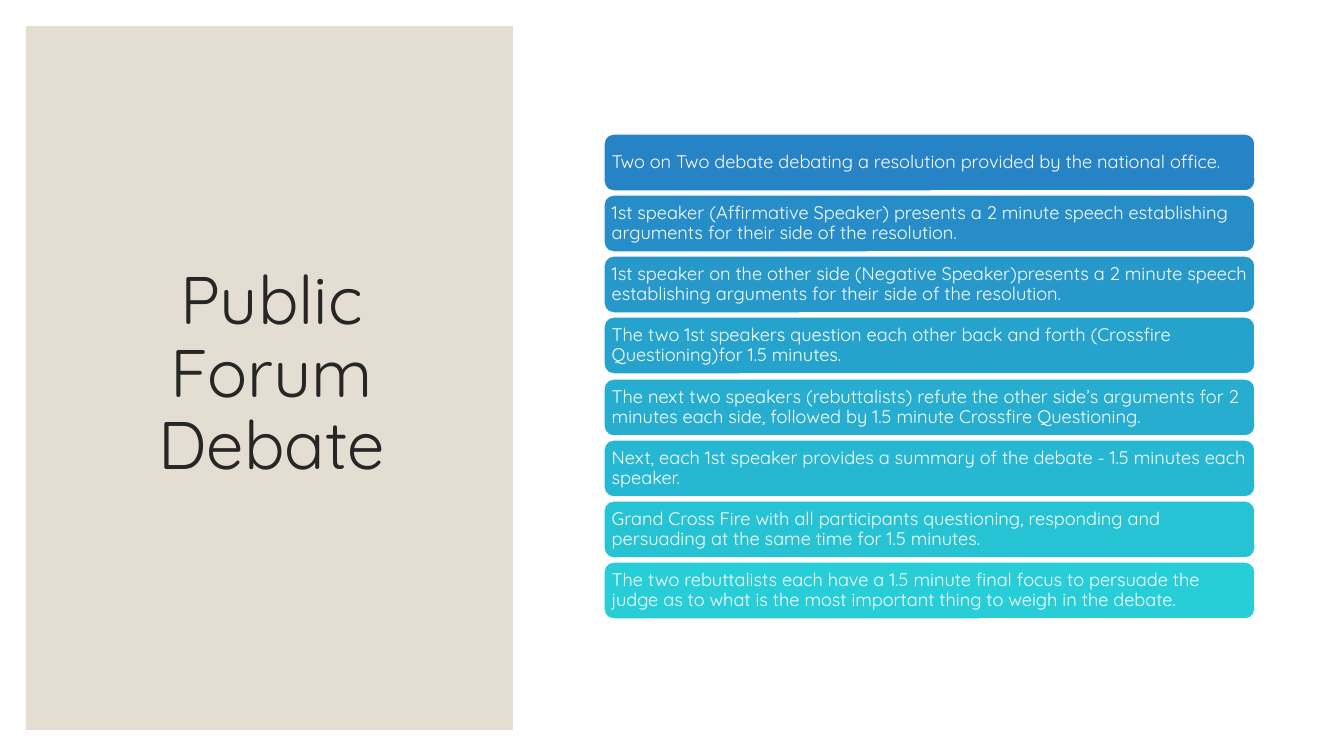
from pptx import Presentation
from pptx import util as u
from pptx.dml.color import RGBColor
from pptx.enum import shapes, text

PX = 914400 / 100.8
COLOURS = {
    "panel": "E3DED1",
    "title": "262626",
    "white": "FFFFFF",
    "first": "2683C6",
    "last": "27CED7",
}
STEPS = [
    "Two on Two debate debating a resolution provided by the national office.",
    "1st speaker (Affirmative Speaker) presents a 2 minute speech establishing "
    "arguments for their side of the resolution.",
    "1st speaker on the other side (Negative Speaker)presents a 2 minute speech "
    "establishing arguments for their side of the resolution.",
    "The two 1st speakers question each other back and forth "
    "(Crossfire Questioning)for 1.5 minutes.",
    "The next two speakers (rebuttalists) refute the other side’s arguments for 2 "
    "minutes each side, followed by 1.5 minute Crossfire Questioning.",
    "Next, each 1st speaker provides a summary of the debate - 1.5 minutes each speaker.",
    "Grand Cross Fire with all participants questioning, responding and "
    "persuading at the same time for 1.5 minutes.",
    "The two rebuttalists each have a 1.5 minute final focus to persuade the "
    "judge as to what is the most important thing to weigh in the debate.",
]


def px(n):
    return u.Emu(round(n * PX))


def rgb(name):
    return RGBColor.from_string(COLOURS[name])


def blend(start, end, share):
    """Return the colour that lies the given share of the way from start to end."""
    return RGBColor(*(int(a + (b - a) * share) for a, b in zip(rgb(start), rgb(end))))


def write(sp, words, size, colour, align=text.PP_ALIGN.LEFT, inset=(5, 5), font="Quicksand"):
    tf = sp.text_frame
    tf.word_wrap = True
    tf.auto_size = text.MSO_AUTO_SIZE.NONE
    tf.vertical_anchor = text.MSO_ANCHOR.MIDDLE
    tf.margin_left = tf.margin_right = px(inset[0])
    tf.margin_top = tf.margin_bottom = px(inset[1])
    p = tf.paragraphs[0]
    p.alignment = align
    p.line_spacing = 0.9
    r = p.add_run()
    r.text = words
    r.font.name = font
    r.font.size = u.Pt(size)
    r.font.color.rgb = rgb(colour)


class Deck:
    def __init__(self):
        self.prs = Presentation()
        self.prs.slide_width, self.prs.slide_height = px(1344), px(756)
        self.s = self.prs.slides.add_slide(self.prs.slide_layouts[5])

    def shape(self, kind, box, fill, line=None):
        sp = self.s.shapes.add_shape(kind, *map(px, box))
        sp.shadow.inherit = False
        sp.fill.solid()
        sp.fill.fore_color.rgb = fill
        if line:
            sp.line.color.rgb = rgb(line)
            sp.line.width = u.Pt(1)
        else:
            sp.line.fill.background()
        return sp

    def title(self, words, box):
        sp = self.s.shapes.title
        sp.left, sp.top, sp.width, sp.height = map(px, box)
        write(sp, words, 48, "title", align=text.PP_ALIGN.CENTER, inset=(10, 5))

    def panel(self, box):
        """Add the coloured panel behind the title."""
        sp = self.shape(shapes.MSO_SHAPE.RECTANGLE, box, rgb("panel"))
        self.s.shapes.title.element.addprevious(sp.element)

    def step(self, words, box, fill):
        sp = self.shape(shapes.MSO_SHAPE.ROUNDED_RECTANGLE, box, fill, line="white")
        write(sp, words, 13, "white")


def main():
    deck = Deck()
    deck.title("Public Forum Debate", (64, 61, 415, 629))
    deck.panel((26, 26, 487, 704))
    last = len(STEPS) - 1
    for i, words in enumerate(STEPS):
        top = 134 + round(428 * i / last)
        deck.step(words, (604, top, 651, 57), blend("first", "last", i / last))
    deck.prs.save("out.pptx")


if __name__ == "__main__":
    main()
